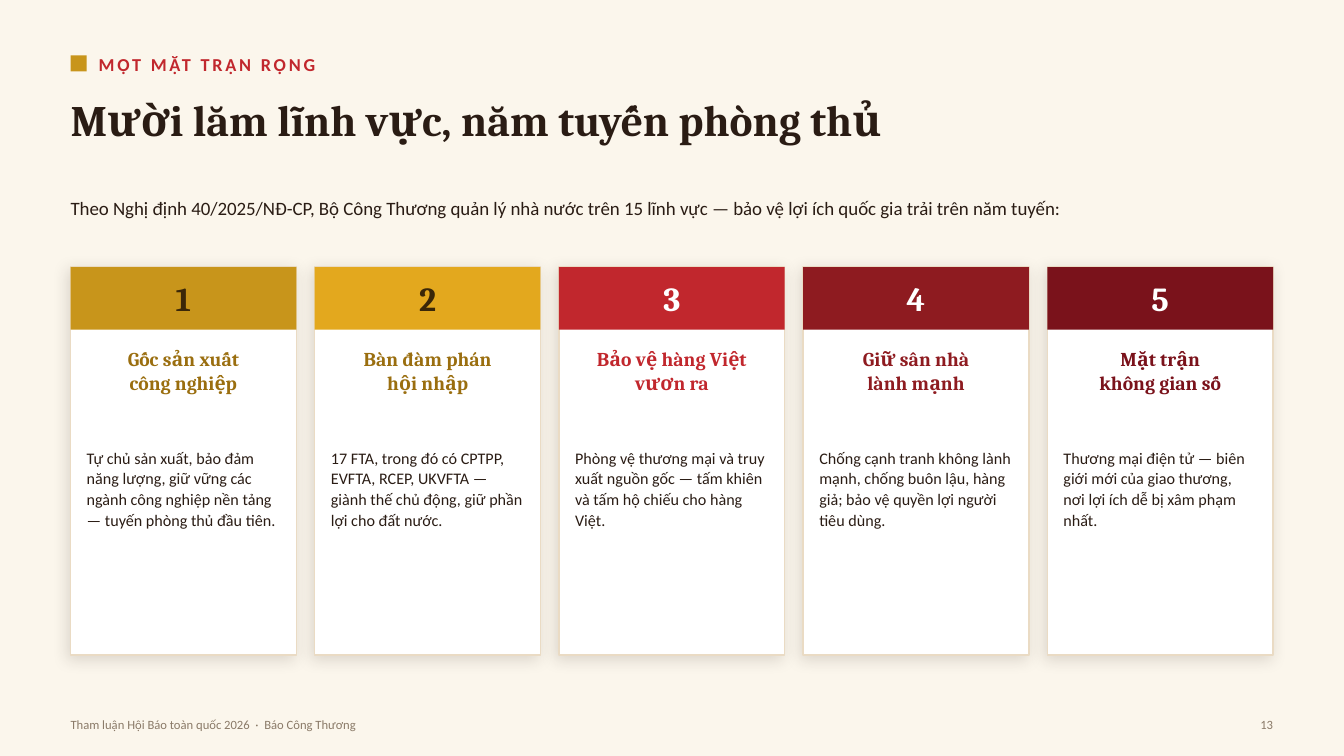
from lxml import etree
from pptx import Presentation
from pptx.dml.color import RGBColor
from pptx.enum.shapes import MSO_SHAPE
from pptx.enum.text import MSO_ANCHOR, MSO_AUTO_SIZE, PP_ALIGN
from pptx.oxml.ns import qn
from pptx.util import Inches, Pt

RECTANGLE = MSO_SHAPE.RECTANGLE
TOP, MIDDLE = MSO_ANCHOR.TOP, MSO_ANCHOR.MIDDLE
LEFT, CENTER, RIGHT = PP_ALIGN.LEFT, PP_ALIGN.CENTER, PP_ALIGN.RIGHT
NO_FIT = MSO_AUTO_SIZE.NONE

CREAM = RGBColor(0xFB, 0xF6, 0xEC)
WHITE = RGBColor(0xFF, 0xFF, 0xFF)
INK = RGBColor(0x2A, 0x1C, 0x14)
DARK_BROWN = RGBColor(0x3A, 0x27, 0x08)
SAND = RGBColor(0xEA, 0xDB, 0xC4)
TAUPE = RGBColor(0x8A, 0x7A, 0x68)
GOLD = RGBColor(0xC8, 0x95, 0x1B)
AMBER = RGBColor(0xE3, 0xA8, 0x1E)
OCHRE = RGBColor(0x9A, 0x6E, 0x0F)
RED = RGBColor(0xC1, 0x27, 0x2D)
CRIMSON = RGBColor(0x8E, 0x1B, 0x20)
MAROON = RGBColor(0x7A, 0x12, 0x1B)

HEADING_FONT, BODY_FONT = "Cambria", "Calibri"

# Grid: one column or row is a tenth of an inch
CELL = Inches(0.1)
SLIDE_COLS, SLIDE_ROWS = 133.33, 75
MARGIN, CONTENT_COLS = 7, 119.3
CARD_TOP, CARD_COLS, CARD_ROWS, BAR_ROWS = 26.5, 22.4, 38.5, 6.2
CARD_PAD = 1.6

# Bar colour, number colour, heading colour, heading, description
DEFENCE_LINES = [
    (GOLD, DARK_BROWN, OCHRE, "Gốc sản xuất\ncông nghiệp",
     "Tự chủ sản xuất, bảo đảm năng lượng, giữ vững các ngành công nghiệp "
     "nền tảng — tuyến phòng thủ đầu tiên."),
    (AMBER, DARK_BROWN, OCHRE, "Bàn đàm phán\nhội nhập",
     "17 FTA, trong đó có CPTPP, EVFTA, RCEP, UKVFTA — giành thế chủ động, "
     "giữ phần lợi cho đất nước."),
    (RED, WHITE, RED, "Bảo vệ hàng Việt vươn ra",
     "Phòng vệ thương mại và truy xuất nguồn gốc — tấm khiên và tấm hộ chiếu "
     "cho hàng Việt."),
    (CRIMSON, WHITE, CRIMSON, "Giữ sân nhà\nlành mạnh",
     "Chống cạnh tranh không lành mạnh, chống buôn lậu, hàng giả; bảo vệ "
     "quyền lợi người tiêu dùng."),
    (MAROON, WHITE, MAROON, "Mặt trận\nkhông gian số",
     "Thương mại điện tử — biên giới mới của giao thương, nơi lợi ích dễ bị "
     "xâm phạm nhất."),
]


def grid(*cells):
    return [round(cell * CELL) for cell in cells]


class SlideBuilder:
    def __init__(self, slide):
        self.slide = slide
        slide.background.fill.solid()
        slide.background.fill.fore_color.rgb = CREAM

    def set_text(self, shape, text, size, color, font=BODY_FONT, bold=False,
                 align=LEFT, anchor=TOP, line_spacing=None, tracking=None):
        frame = shape.text_frame
        frame.word_wrap = True
        frame.auto_size = NO_FIT
        frame.vertical_anchor = anchor
        frame.margin_left = frame.margin_right = 0
        frame.margin_top = frame.margin_bottom = 0
        paragraph = frame.paragraphs[0]
        paragraph.text = text
        paragraph.alignment = align
        if line_spacing:
            paragraph.line_spacing = line_spacing
        paragraph.font.name = font
        paragraph.font.size = Pt(size)
        paragraph.font.bold = bold
        paragraph.font.color.rgb = color
        if tracking:
            for run in paragraph.runs:
                run._r.get_or_add_rPr().set("spc", str(tracking * 100))

    def title(self, box, text, size, color):
        heading = self.slide.shapes.title
        heading.left, heading.top, heading.width, heading.height = grid(*box)
        self.set_text(heading, text, size, color, HEADING_FONT, bold=True)

    def text(self, box, text, size, color, **style):
        self.set_text(self.slide.shapes.add_textbox(*grid(*box)),
                      text, size, color, **style)

    def rect(self, box, fill, outline=None):
        block = self.slide.shapes.add_shape(RECTANGLE, *grid(*box))
        block.shadow.inherit = False
        block.fill.solid()
        block.fill.fore_color.rgb = fill
        if outline is None:
            block.line.fill.background()
        else:
            block.line.color.rgb = outline
            block.line.width = Pt(1)
        return block

    def soft_shadow(self, block):
        effects = block._element.spPr.find(qn("a:effectLst"))
        shadow = etree.SubElement(
            effects, qn("a:outerShdw"), blurRad=str(Pt(11)), dist=str(Pt(3)),
            dir=str(135 * 60000), algn="bl", rotWithShape="0")
        tint = etree.SubElement(shadow, qn("a:srgbClr"), val=str(INK))
        etree.SubElement(tint, qn("a:alpha"), val="14000")

    def card(self, left, number, bar_color, number_color, heading_color,
             heading, description):
        panel = self.rect((left, CARD_TOP, CARD_COLS, CARD_ROWS), WHITE, SAND)
        self.soft_shadow(panel)
        bar = self.rect((left, CARD_TOP, CARD_COLS, BAR_ROWS), bar_color)
        self.set_text(bar, str(number), 24, number_color, HEADING_FONT,
                      bold=True, align=CENTER, anchor=MIDDLE)
        inner_left, inner_cols = left + CARD_PAD, CARD_COLS - 2 * CARD_PAD
        self.text((inner_left, CARD_TOP + 7.8, inner_cols, 11), heading, 14,
                  heading_color, font=HEADING_FONT, bold=True, align=CENTER,
                  line_spacing=1.04)
        self.text((inner_left, CARD_TOP + 17.8, inner_cols, 19.5), description,
                  11.5, INK, line_spacing=1.08)


def main():
    deck = Presentation()
    deck.slide_width, deck.slide_height = grid(SLIDE_COLS, SLIDE_ROWS)
    page = SlideBuilder(deck.slides.add_slide(deck.slide_layouts[5]))

    # Header
    page.rect((MARGIN, 5.5, 1.6, 1.6), GOLD)
    page.text((MARGIN + 2.8, 4.7, 116.3, 3.4), "MỘT MẶT TRẬN RỘNG", 13, RED,
              bold=True, anchor=MIDDLE, tracking=2)
    page.title((MARGIN, 9.2, CONTENT_COLS, 10),
               "Mười lăm lĩnh vực, năm tuyến phòng thủ", 31, INK)
    page.text((MARGIN, 19.5, CONTENT_COLS, 5),
              "Theo Nghị định 40/2025/NĐ-CP, Bộ Công Thương quản lý nhà nước "
              "trên 15 lĩnh vực — bảo vệ lợi ích quốc gia trải trên năm tuyến:",
              13.5, INK)

    # Five cards, spread evenly between the margins
    pitch = (CONTENT_COLS - CARD_COLS) / (len(DEFENCE_LINES) - 1)
    for index, defence_line in enumerate(DEFENCE_LINES):
        page.card(MARGIN + index * pitch, index + 1, *defence_line)

    # Footer
    page.text((MARGIN, 70.4, 90, 3),
              "Tham luận Hội Báo toàn quốc 2026  ·  Báo Công Thương",
              9, TAUPE, anchor=MIDDLE)
    page.text((MARGIN + CONTENT_COLS - 6, 70.4, 6, 3), "13", 9, TAUPE,
              align=RIGHT, anchor=MIDDLE)

    deck.save("out.pptx")


if __name__ == "__main__":
    main()
